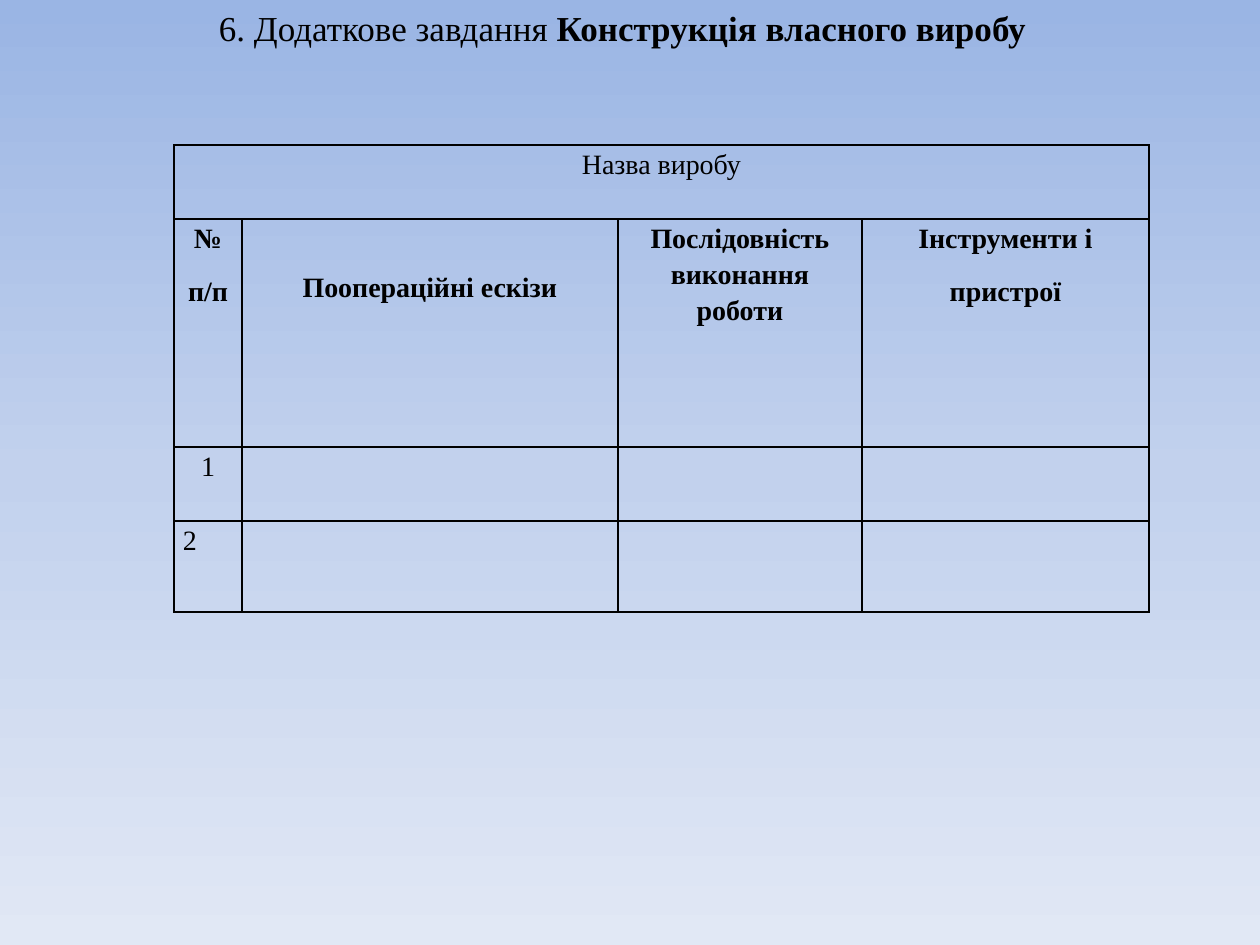
"""Build the slide with the task title and the work plan table."""
import copy
import dataclasses
import typing

import lxml.etree
import pptx
import pptx.dml.color
import pptx.enum.text
import pptx.oxml.ns
import pptx.util

SCALE = 914400 / 126
ALIGN = pptx.enum.text.PP_ALIGN


@dataclasses.dataclass(frozen=True)
class Theme:
    font: str = "Times New Roman"
    ink: str = "000000"
    sky: tuple[str, ...] = ("9AB5E4", "C2D1ED", "E1E8F5")
    title: int = 20
    body: int = 16
    rule: int = 1


@dataclasses.dataclass(frozen=True)
class Entry:
    row: int
    col: int
    lines: tuple[str, ...]
    bold: bool = False
    align: typing.Any = ALIGN.CENTER
    top: int = 0


THEME = Theme()
COLS = (68, 376, 244, 287)
ROWS = (74, 228, 74, 91)
ENTRIES = (
    Entry(0, 0, ("Назва виробу",)),
    Entry(1, 0, ("№", "п/п"), bold=True),
    Entry(1, 1, ("Поопераційні ескізи",), bold=True, top=49),
    Entry(1, 2, ("Послідовність виконання роботи",), bold=True),
    Entry(1, 3, ("Інструменти і", "пристрої"), bold=True),
    Entry(2, 0, ("1",)),
    Entry(3, 0, ("2",), align=ALIGN.LEFT),
)


def px(size: int) -> pptx.util.Emu:
    """Turn px into EMU."""
    return pptx.util.Emu(round(size * SCALE))


def tint(code: str) -> pptx.dml.color.RGBColor:
    """Turn a hex code into a colour."""
    return pptx.dml.color.RGBColor.from_string(code)


def write(para: typing.Any, text: str, *, size: int, bold: bool = False,
          align: typing.Any = ALIGN.CENTER, space: float | None = None,
          after: int = 0) -> None:
    """Add a run to a paragraph and set its format."""
    para.alignment = align
    para.line_spacing = space
    para.space_after = pptx.util.Pt(after)
    run = para.add_run()
    run.text = text
    run.font.name = THEME.font
    run.font.size = pptx.util.Pt(size)
    run.font.bold = bold
    run.font.color.rgb = tint(THEME.ink)


def paint(slide: typing.Any) -> None:
    """Fill the background from top to bottom."""
    fill = slide.background.fill
    fill.gradient()
    fill.gradient_angle = 270
    first = next(slide.element.iter(pptx.oxml.ns.qn("a:gs")))
    first.addnext(copy.deepcopy(first))
    for i, (stop, code) in enumerate(zip(fill.gradient_stops, THEME.sky)):
        stop.position = i / (len(THEME.sky) - 1)
        stop.color.rgb = tint(code)


def frame(cell: typing.Any) -> None:
    """Clear the cell fill and draw its four borders."""
    qn = pptx.oxml.ns.qn
    cell.margin_left = cell.margin_right = px(9)
    cell.margin_top = cell.margin_bottom = 0
    cell.fill.background()
    props = cell._tc.get_or_add_tcPr()
    for i, side in enumerate("LRTB"):
        line = lxml.etree.Element(qn(f"a:ln{side}"), w=str(pptx.util.Pt(THEME.rule)))
        solid = lxml.etree.SubElement(line, qn("a:solidFill"))
        lxml.etree.SubElement(solid, qn("a:srgbClr"), val=THEME.ink)
        props.insert(i, line)


def add_plan(slide: typing.Any) -> None:
    """Add the work plan table."""
    table = slide.shapes.add_table(len(ROWS), len(COLS), px(174), px(145),
                                   px(sum(COLS)), px(sum(ROWS))).table
    table.first_row = table.horz_banding = False
    for col, width in zip(table.columns, COLS):
        col.width = px(width)
    for row, height in zip(table.rows, ROWS):
        row.height = px(height)
    for cell in table.iter_cells():
        frame(cell)
    table.cell(0, 0).merge(table.cell(0, len(COLS) - 1))
    for entry in ENTRIES:
        cell = table.cell(entry.row, entry.col)
        cell.margin_top = px(entry.top)
        text = cell.text_frame
        for i, line in enumerate(entry.lines):
            para = text.add_paragraph() if i else text.paragraphs[0]
            write(para, line, size=THEME.body, bold=entry.bold,
                  align=entry.align, space=1.15, after=10)


def add_title(slide: typing.Any) -> None:
    """Add the title in plain and bold type."""
    text = slide.shapes.add_textbox(px(203), 0, px(839), px(55)).text_frame
    text.word_wrap = False
    text.auto_size = pptx.enum.text.MSO_AUTO_SIZE.SHAPE_TO_FIT_TEXT
    text.vertical_anchor = pptx.enum.text.MSO_ANCHOR.MIDDLE
    para = text.paragraphs[0]
    write(para, "6. Додаткове завдання ", size=THEME.title)
    write(para, "Конструкція власного виробу", size=THEME.title, bold=True)


def main() -> None:
    """Build and save the deck."""
    deck = pptx.Presentation()
    deck.slide_width, deck.slide_height = px(1260), px(945)
    slide = deck.slides.add_slide(deck.slide_layouts[6])
    paint(slide)
    add_plan(slide)
    add_title(slide)
    deck.save("out.pptx")


if __name__ == "__main__":
    main()
